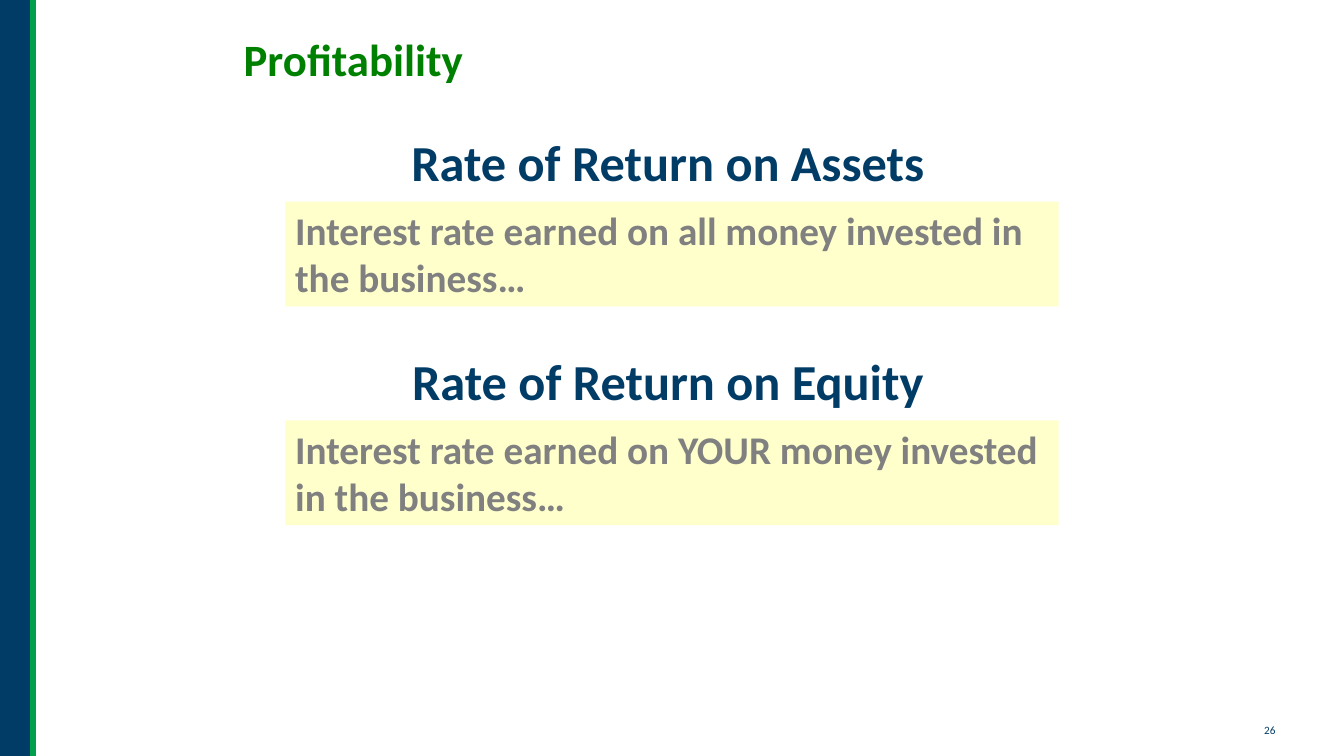
"""Build the Profitability slide with its two rate-of-return definitions."""
from dataclasses import dataclass

from lxml.etree import SubElement
from pptx import Presentation
from pptx.dml.color import RGBColor
from pptx.enum.shapes import MSO_CONNECTOR, MSO_SHAPE
from pptx.enum.text import MSO_ANCHOR, MSO_AUTO_SIZE, PP_ALIGN
from pptx.oxml.ns import qn
from pptx.util import Inches, Pt


@dataclass(frozen=True)
class Theme:
    """Hold the colours, font and type sizes of the slide."""
    font: str = "Calibri"
    navy: str = "003C66"
    stripe: str = "009F4D"
    green: str = "008000"
    gray: str = "808080"
    cream: str = "FFFFCC"
    title_size: int = 32
    heading_size: int = 36
    body_size: int = 28
    number_size: int = 8
    stripe_width: float = 4.5


THEME = Theme()
DEFINITIONS = [
    ("Rate of Return on Assets",
     "Interest rate earned on all money invested in the business…"),
    ("Rate of Return on Equity",
     "Interest rate earned on YOUR money invested in the business…"),
]
FIRST_TOP = 1.25
DEFINITION_STEP = 2.17


def write_text(shape, text, size, color, align=PP_ALIGN.LEFT,
               anchor=MSO_ANCHOR.TOP, bold=True, wrap=True):
    """Put one formatted paragraph into a shape."""
    frame = shape.text_frame
    frame.text = text
    frame.word_wrap = wrap
    frame.auto_size = MSO_AUTO_SIZE.NONE
    frame.vertical_anchor = anchor
    para = frame.paragraphs[0]
    para.alignment = align
    font = para.runs[0].font
    font.name = THEME.font
    font.size = Pt(size)
    font.bold = bold
    font.color.rgb = RGBColor.from_string(color)


def add_panel(page, left, top, width, height, color):
    """Add a plain filled rectangle without outline or shadow."""
    panel = page.shapes.add_shape(MSO_SHAPE.RECTANGLE, Inches(left), Inches(top),
                                  Inches(width), Inches(height))
    panel.shadow.inherit = False
    panel.fill.solid()
    panel.fill.fore_color.rgb = RGBColor.from_string(color)
    panel.line.fill.background()
    return panel


def add_side_band(page):
    """Add the navy band and its green stripe at the left edge."""
    add_panel(page, 0, 0, 0.33, 7.5, THEME.navy)
    stripe = page.shapes.add_connector(MSO_CONNECTOR.STRAIGHT, Inches(0.33), Inches(0),
                                       Inches(0.33), Inches(7.5))
    stripe.line.color.rgb = RGBColor.from_string(THEME.stripe)
    stripe.line.width = Pt(THEME.stripe_width)
    SubElement(stripe.element.spPr, qn("a:effectLst"))


def add_title(page, text):
    """Place and format the title placeholder."""
    title = page.shapes.title
    title.left, title.top = Inches(1.67), Inches(0.08)
    title.width, title.height = Inches(3.67), Inches(1)
    write_text(title, text, THEME.title_size, THEME.green,
               PP_ALIGN.CENTER, MSO_ANCHOR.MIDDLE)


def add_definition(page, top, heading, meaning):
    """Add a centred heading with its highlighted meaning below."""
    box = page.shapes.add_textbox(Inches(2.75), Inches(top), Inches(7.75), Inches(0.71))
    write_text(box, heading, THEME.heading_size, THEME.navy, PP_ALIGN.CENTER)
    panel = add_panel(page, 2.83, top + 0.75, 7.67, 1.04, THEME.cream)
    write_text(panel, meaning, THEME.body_size, THEME.gray)


def add_page_number(page, number):
    """Add the small page number at the lower right."""
    box = page.shapes.add_textbox(Inches(12.44), Inches(7.13), Inches(0.34), Inches(0.24))
    write_text(box, number, THEME.number_size, THEME.navy, bold=False, wrap=False)


def main():
    """Build and save the deck."""
    deck = Presentation()
    deck.slide_width, deck.slide_height = Inches(13.33), Inches(7.5)
    page = deck.slides.add_slide(deck.slide_layouts.get_by_name("Title Only"))
    add_side_band(page)
    add_title(page, "Profitability")
    for index, (heading, meaning) in enumerate(DEFINITIONS):
        add_definition(page, FIRST_TOP + index * DEFINITION_STEP, heading, meaning)
    add_page_number(page, "26")
    deck.save("out.pptx")


if __name__ == "__main__":
    main()
